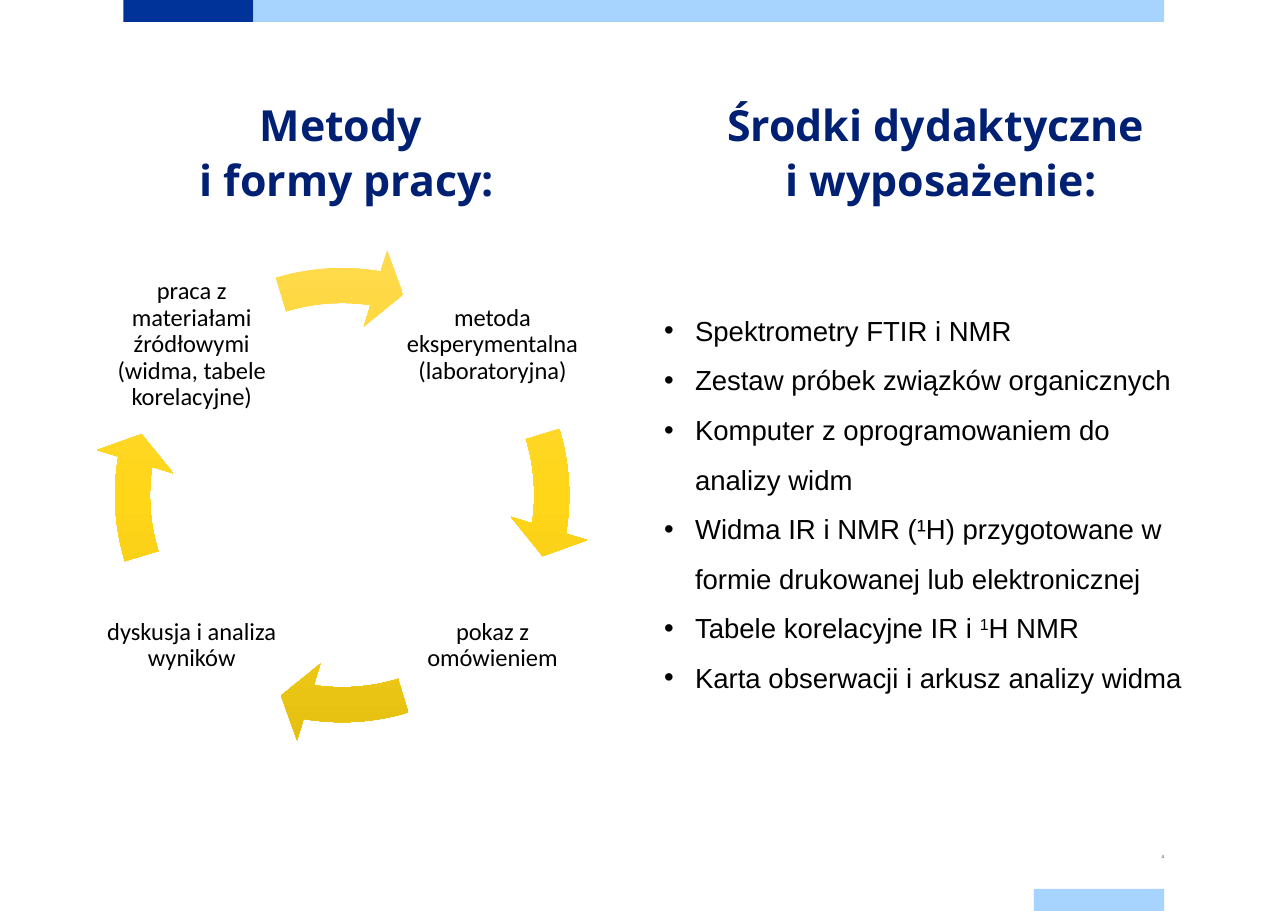
"""Build the slide on working methods and teaching aids."""
from lxml import etree
from pptx import Presentation
from pptx import util as u
from pptx.dml.color import RGBColor
from pptx.enum import shapes, text
from pptx.oxml.ns import qn

WIDTH, HEIGHT = u.Inches(11.69), u.Inches(8.27)
NAVY = RGBColor(0x00, 0x33, 0x99)
SKY = RGBColor(0xA6, 0xD3, 0xFF)
TITLE_BLUE = RGBColor(0x00, 0x20, 0x73)
BLACK = RGBColor(0x00, 0x00, 0x00)
ARROW_STOPS = [
    (0, RGBColor(0xFF, 0xDA, 0x4F)),
    (50, RGBColor(0xFF, 0xD6, 0x18)),
    (100, RGBColor(0xE5, 0xC0, 0x13)),
]
MARGIN, COLUMN, BAR_HEIGHT = 9.58, 10.1, 2.42
HEADING_TOP, HEADING_HEIGHT = 10.4, 14.27
CYCLE_LEFT, CYCLE_TOP = 8.04, 28.17
CYCLE_STEP_X, CYCLE_STEP_Y = 23.35, 33.01
QUARTER_TURN, FULL_TURN = 54, 216
STEPS = [
    (1, 0, "metoda eksperymentalna (laboratoryjna)"),
    (1, 1, "pokaz z omówieniem"),
    (0, 1, "dyskusja i analiza wyników"),
    (0, 0, "praca z materiałami źródłowymi (widma, tabele korelacyjne)"),
]
AIDS = [
    ["Spektrometry FTIR i NMR"],
    ["Zestaw próbek związków organicznych"],
    ["Komputer z oprogramowaniem do analizy widm"],
    ["Widma IR i NMR (¹H) przygotowane w formie drukowanej lub elektronicznej"],
    ["Tabele korelacyjne IR i ", "1", "H NMR"],
    ["Karta obserwacji i arkusz analizy widma"],
]


def area(left, top, width, height):
    """Turn percentages of the slide into a position and size."""
    return (
        round(WIDTH * left / 100), round(HEIGHT * top / 100),
        round(WIDTH * width / 100), round(HEIGHT * height / 100),
    )


def set_frame(box, anchor, insets):
    """Set wrapping, anchor and insets, given as left, top, right, bottom."""
    frame = box.text_frame
    frame.word_wrap = True
    frame.auto_size = text.MSO_AUTO_SIZE.NONE
    frame.vertical_anchor = anchor
    frame.margin_left, frame.margin_top, frame.margin_right, frame.margin_bottom = (
        u.Inches(inset) for inset in insets
    )
    return frame


def add_span(para, words, font, size, color, bold=False):
    """Add one formatted run."""
    span = para.add_run()
    span.text = words
    span.font.name, span.font.size = font, u.Pt(size)
    span.font.bold, span.font.color.rgb = bold, color
    return span


def add_bar(slide, column, columns, top, color):
    """Add an edge bar that spans whole columns."""
    place = area(MARGIN + column * COLUMN, top, columns * COLUMN, BAR_HEIGHT)
    bar = slide.shapes.add_shape(shapes.MSO_SHAPE.RECTANGLE, *place)
    bar.shadow.inherit = False
    bar.fill.solid()
    bar.fill.fore_color.rgb = color
    bar.line.fill.background()


def fill_heading(box, lines, split):
    """Write centred heading lines, as paragraphs or with line breaks."""
    frame = set_frame(box, text.MSO_ANCHOR.TOP, (0, 0, 0, 0))
    para = frame.paragraphs[0]
    for index, line in enumerate(lines):
        if index and split:
            para = frame.add_paragraph()
        elif index:
            para.add_line_break()
        para.alignment = text.PP_ALIGN.CENTER
        para.line_spacing = u.Pt(36)
        add_span(para, line, "Open Sans", 28, TITLE_BLUE, True)


def add_label(slide, column, row, words):
    """Add one step label of the cycle."""
    place = area(CYCLE_LEFT + column * CYCLE_STEP_X,
                 CYCLE_TOP + row * CYCLE_STEP_Y, 13.69, 19.35)
    box = slide.shapes.add_textbox(*place)
    para = set_frame(box, text.MSO_ANCHOR.MIDDLE, [0.02] * 4).paragraphs[0]
    para.alignment = text.PP_ALIGN.CENTER
    para.line_spacing = 0.9
    add_span(para, words, "Calibri", 16, BLACK)


def add_arrow(slide, turn):
    """Add one curved arrow, turned by quarter turns from the right side."""
    arrow = slide.shapes.add_shape(
        shapes.MSO_SHAPE.CIRCULAR_ARROW, *area(7.19, 26.96, 38.75, 54.78))
    end = 5.5 + turn * QUARTER_TURN
    start = (205.85 + turn * QUARTER_TURN) % FULL_TURN
    for index, value in enumerate([0.07, 4.65, end, start, 0.08]):
        arrow.adjustments[index] = value
    arrow.shadow.inherit = False
    arrow.line.fill.background()
    arrow.fill.gradient()
    arrow.fill.gradient_angle = 270
    stops = arrow._element.spPr.find(".//" + qn("a:gsLst"))
    for stop in list(stops):
        stops.remove(stop)
    for share, color in ARROW_STOPS:
        stop = etree.SubElement(stops, qn("a:gs"), pos=str(share * 1000))
        etree.SubElement(stop, qn("a:srgbClr"), val=str(color))


def add_aids(slide):
    """Add the bulleted list of teaching aids."""
    box = slide.shapes.add_textbox(*area(50.73, 32.16, 42.69, 44.5))
    frame = set_frame(box, text.MSO_ANCHOR.MIDDLE, (0.1, 0.05, 0.1, 0.05))
    for index, parts in enumerate(AIDS):
        para = frame.add_paragraph() if index else frame.paragraphs[0]
        para.line_spacing = 1.5
        props = para._p.get_or_add_pPr()
        props.set("marL", str(u.Inches(0.28)))
        props.set("indent", str(-u.Inches(0.28)))
        etree.SubElement(props, qn("a:buFont"), typeface="Arial")
        etree.SubElement(props, qn("a:buChar"), char="•")
        for part in parts:
            span = add_span(para, part, "Arial", 18, BLACK)
            if part == "1":
                span.font._element.set("baseline", "30000")


def add_page_number(slide):
    """Add the small page number above the bottom bar."""
    box = slide.shapes.add_textbox(*area(MARGIN + 7 * COLUMN, 92.87, COLUMN, 2.42))
    para = set_frame(box, text.MSO_ANCHOR.MIDDLE, (0, 0.08, 0, 0.08)).paragraphs[0]
    para.alignment = text.PP_ALIGN.RIGHT
    para.line_spacing = 0.7
    add_span(para, "4", "Open Sans", 2.8, TITLE_BLUE)


def main():
    """Build and save the deck."""
    deck = Presentation()
    deck.slide_width, deck.slide_height = WIDTH, HEIGHT
    slide = deck.slides.add_slide(deck.slide_layouts[5])

    add_bar(slide, 0, 1, 0, NAVY)
    add_bar(slide, 1, 7, 0, SKY)
    add_bar(slide, 7, 1, 100 - BAR_HEIGHT, SKY)

    title = slide.shapes.title
    title.left, title.top, title.width, title.height = area(
        8.04, HEADING_TOP, 37.72, HEADING_HEIGHT)
    fill_heading(title, ["Metody ", "i formy pracy:"], split=False)
    aids_heading = slide.shapes.add_textbox(
        *area(53.38, HEADING_TOP, 39.35, HEADING_HEIGHT))
    fill_heading(aids_heading, ["Środki dydaktyczne ", "i wyposażenie:"], split=True)

    for turn, (column, row, words) in enumerate(STEPS):
        add_label(slide, column, row, words)
        add_arrow(slide, turn)

    add_aids(slide)
    add_page_number(slide)
    deck.save("out.pptx")


if __name__ == "__main__":
    main()
